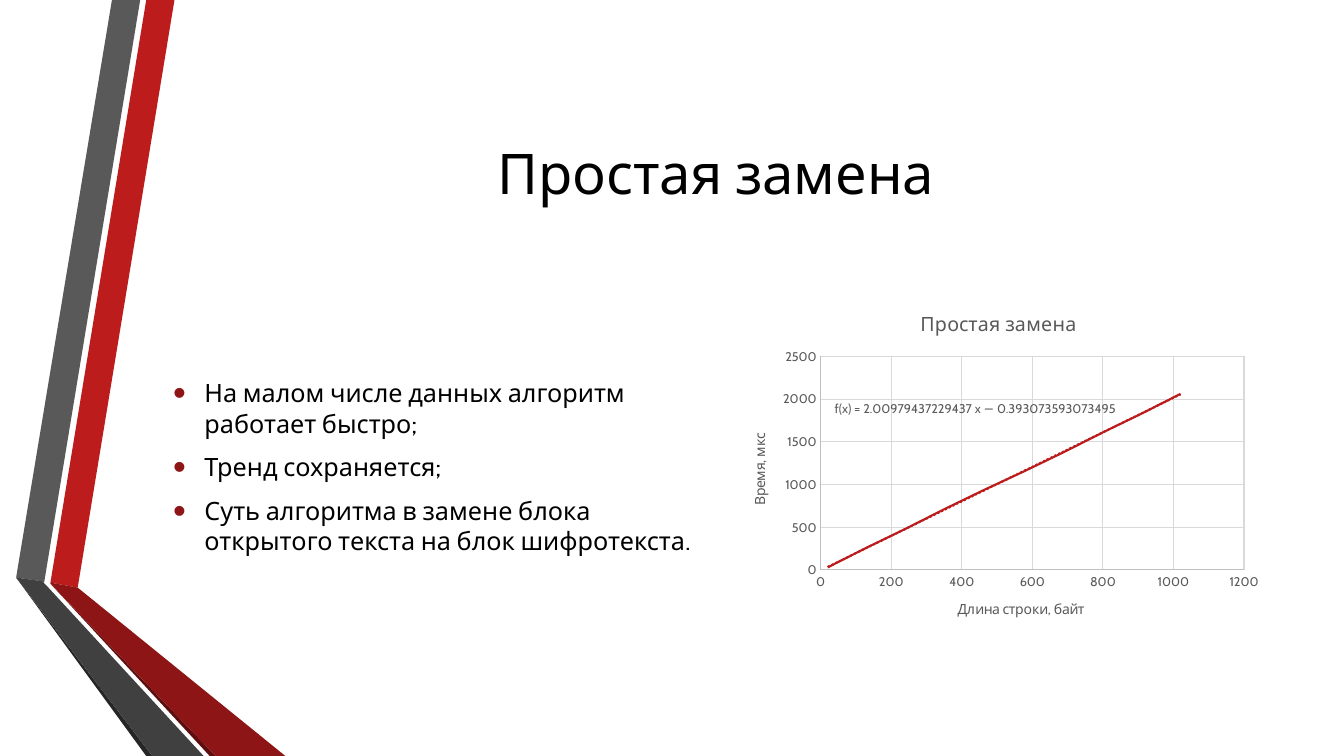
import pptx
import pptx.chart.data
import pptx.dml.color
import pptx.enum.chart
import pptx.enum.text
import pptx.oxml
import pptx.oxml.ns
import pptx.util

GREY, GRID, AXIS = "595959", "D9D9D9", "BFBFBF"
RED, DARK_RED, BLACK = "BC1C1C", "8D1515", "000000"


def colour(value):
    return pptx.dml.color.RGBColor.from_string(value)


def apply_format(target, values):
    for name, value in values.items():
        setattr(target, name, value)


def xml(text):
    prefixes = pptx.oxml.ns.nsdecls("a", "c")
    return pptx.oxml.parse_xml(text.replace(" NS", " " + prefixes, 1))


class Deck:
    """Style and current slide; lengths are percentages of the slide."""

    font = "Cabin"

    def __init__(self, width, height):
        self.show = pptx.Presentation()
        self.width, self.height = pptx.util.Inches(width), pptx.util.Inches(height)
        apply_format(self.show, {"slide_width": self.width, "slide_height": self.height})
        self.slide = self.show.slides.add_slide(self.show.slide_layouts[6])

    def place(self, x, y):
        return round(self.width * x / 100), round(self.height * y / 100)

    def style(self, font, size, text_colour):
        apply_format(font, {"name": self.font, "size": pptx.util.Pt(size), "bold": False})
        font.color.rgb = colour(text_colour)

    def stroke(self, line, line_colour, width):
        line.color.rgb = colour(line_colour)
        line.width = pptx.util.Pt(width)

    def ribbon(self, fill, *corners):
        start, *rest = [self.place(*corner) for corner in corners]
        builder = self.slide.shapes.build_freeform(*start)
        builder.add_line_segments(rest, close=True)
        shape = builder.convert_to_shape()
        shape.shadow.inherit = False
        shape.fill.solid()
        shape.fill.fore_color.rgb = colour(fill)
        shape.line.fill.background()

    def text(self, box, lines, size, text_colour=BLACK, align="LEFT", bullets=False, **frame_format):
        left, top, width, height = box
        frame = self.slide.shapes.add_textbox(
            *self.place(left, top), *self.place(width, height)).text_frame
        apply_format(frame, {"word_wrap": True,
                             "vertical_anchor": pptx.enum.text.MSO_ANCHOR.MIDDLE,
                             **frame_format})
        frame.text = "\n".join(lines)
        for paragraph in frame.paragraphs:
            paragraph.alignment = pptx.enum.text.PP_ALIGN[align]
            self.style(paragraph.runs[0].font, size, text_colour)
            if bullets:
                self.bullet(paragraph)

    def bullet(self, paragraph):
        apply_format(paragraph, {"space_before": pptx.util.Pt(3.6),
                                 "space_after": pptx.util.Pt(6)})
        properties = paragraph._p.get_or_add_pPr()
        indent = pptx.util.Inches(0.31)
        properties.set("marL", str(indent))
        properties.set("indent", str(-indent))
        for part in (f'<a:buClr NS><a:srgbClr val="{DARK_RED}"/></a:buClr>',
                     '<a:buSzPct NS val="145000"/>',
                     '<a:buFont NS typeface="Arial"/>',
                     '<a:buChar NS char="•"/>'):
            properties.append(xml(part))

    def caption(self, owner, text, size):
        frame = owner.text_frame
        frame.text = text
        self.style(frame.paragraphs[0].runs[0].font, size, GREY)

    def axis(self, axis, title, maximum, step):
        apply_format(axis, {"minimum_scale": 0, "maximum_scale": maximum,
                            "major_unit": step, "has_major_gridlines": True,
                            "major_tick_mark": pptx.enum.chart.XL_TICK_MARK.NONE,
                            "minor_tick_mark": pptx.enum.chart.XL_TICK_MARK.NONE})
        self.style(axis.tick_labels.font, 9, GREY)
        self.stroke(axis.format.line, AXIS, 0.75)
        self.stroke(axis.major_gridlines.format.line, GRID, 0.75)
        self.caption(axis.axis_title, title, 10)

    def trend_chart(self, box, title, points, x_axis, y_axis):
        data = pptx.chart.data.XyChartData()
        timing = data.add_series(title)
        for length, time in points:
            timing.add_data_point(length, time)
        left, top, width, height = box
        chart = self.slide.shapes.add_chart(
            pptx.enum.chart.XL_CHART_TYPE.XY_SCATTER_SMOOTH_NO_MARKERS,
            *self.place(left, top), *self.place(width, height), data).chart
        self.style(chart.font, 10, BLACK)
        apply_format(chart, {"has_legend": False, "has_title": True})
        self.caption(chart.chart_title, title, 14)
        self.axis(chart.category_axis, *x_axis)
        self.axis(chart.value_axis, *y_axis)
        plot = chart.plots[0]
        plot.vary_by_categories = False
        series = plot.series[0]
        series.smooth = True
        series.marker.style = pptx.enum.chart.XL_MARKER_STYLE.NONE
        self.stroke(series.format.line, RED, 1.5)

        # Linear trend and inner plot area
        series._element.find(pptx.oxml.ns.qn("c:xVal")).addprevious(xml(
            '<c:trendline NS><c:spPr><a:ln w="19050"><a:solidFill>'
            f'<a:srgbClr val="{RED}"/></a:solidFill><a:prstDash val="sysDot"/></a:ln></c:spPr>'
            '<c:trendlineType val="linear"/><c:dispRSqr val="0"/><c:dispEq val="0"/>'
            '</c:trendline>'))
        area = chart._chartSpace.chart.plotArea
        for old in area.findall(pptx.oxml.ns.qn("c:layout")):
            area.remove(old)
        shares = {"x": 0.17, "y": 0.18, "w": 0.785, "h": 0.62}
        area.insert(0, xml(
            '<c:layout NS><c:manualLayout><c:layoutTarget val="inner"/>'
            '<c:xMode val="edge"/><c:yMode val="edge"/>'
            + "".join(f'<c:{side} val="{share}"/>' for side, share in shares.items())
            + '</c:manualLayout></c:layout>'))


def main():
    deck = Deck(13.33, 7.5)
    heading = "Простая замена"

    # Folded ribbons on the left
    deck.ribbon(RED, (3.75, 77.07), (5.78, 77.73), (12.98, 0), (10.88, 0))
    deck.ribbon(GREY, (10.43, 0), (8.33, 0), (1.2, 76.4), (3.3, 76.93))
    deck.ribbon("262626", (1.2, 76.4), (10.88, 100), (11.33, 100))
    deck.ribbon("5E0E0E", (3.75, 77.2), (15.6, 100), (16.05, 100))
    deck.ribbon(DARK_RED, (3.75, 77.2), (16.05, 100), (21.23, 100), (5.78, 77.73), (3.75, 77.07))
    deck.ribbon("404040", (15.15, 100), (3.6, 77.73), (3.23, 77.07), (3.3, 76.93),
                (1.2, 76.4), (11.33, 100))

    # Title and findings
    deck.text((12.15, 10, 82.22, 25.6), [heading], 40, align="CENTER")
    deck.text((12.15, 38.93, 40.13, 45.6), [
        "На малом числе данных алгоритм работает быстро;",
        "Тренд сохраняется;",
        "Суть алгоритма в замене блока открытого текста на блок шифротекста.",
    ], 18, bullets=True)

    # Timing chart with its trend equation
    lengths = [20, 130, 240, 350, 460, 580, 690, 800, 910, 1020]
    times = [30, 260, 480, 710, 930, 1160, 1380, 1610, 1830, 2060]
    deck.trend_chart((54.24, 38.93, 40.13, 45.6), heading, zip(lengths, times),
                     ("Длина строки, байт", 1200, 200), ("Время, мкс", 2500, 500))
    deck.text((62.1, 52.5, 22, 3), ["f(x) = 2.00979437229437 x − 0.393073593073495"], 9, GREY,
              word_wrap=False, margin_left=0, margin_right=0, margin_top=0, margin_bottom=0)

    deck.show.save("out.pptx")


if __name__ == "__main__":
    main()
